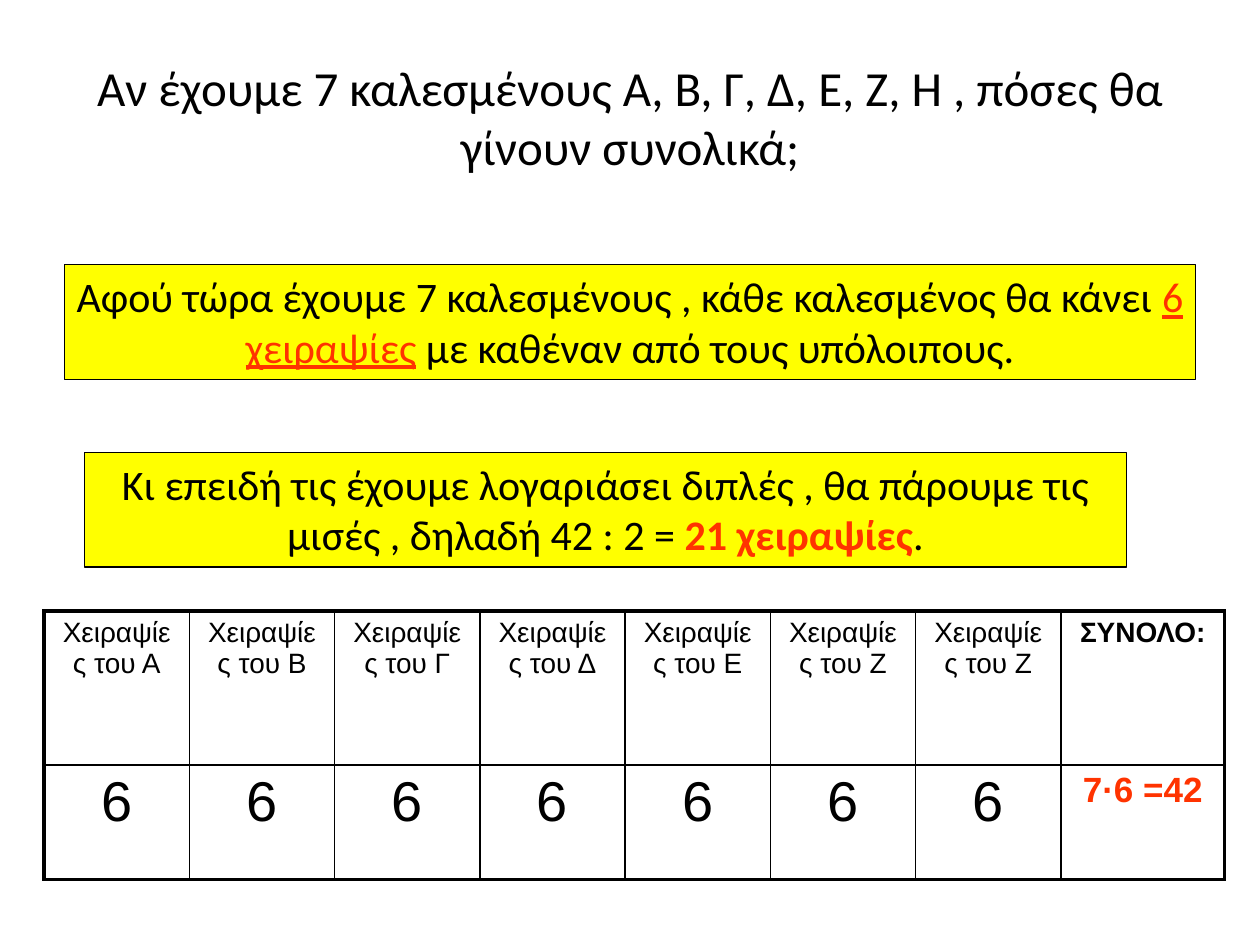
import pptx
import pptx.dml.color
import pptx.enum.shapes
import pptx.enum.text
import pptx.oxml
import pptx.oxml.ns
import pptx.util

Pt = pptx.util.Pt
CENTER = pptx.enum.text.PP_ALIGN.CENTER
MIDDLE = pptx.enum.text.MSO_ANCHOR.MIDDLE
BLACK, RED, YELLOW = "000000", "FF3300", "FFFF00"
THIN, THICK = 1, 2.25


def color(value):
    return pptx.dml.color.RGBColor.from_string(value)


def format_run(r, size, font, fill=BLACK, bold=False, underline=False):
    r.font.size = Pt(size)
    r.font.name = font
    r.font.color.rgb = color(fill)
    r.font.bold = bold
    r.font.underline = underline


def add_title(s, text):
    sp = s.shapes.title
    sp.left, sp.top, sp.width, sp.height = Pt(36), Pt(21.6), Pt(648), Pt(90)
    tf = sp.text_frame
    tf.text = text
    tf.vertical_anchor = MIDDLE
    p = tf.paragraphs[0]
    p.alignment = CENTER
    format_run(p.runs[0], 28, "Calibri")


def add_note(s, left, top, width, height, parts):
    """Yellow framed box; parts are (text, run format) pairs."""
    sp = s.shapes.add_shape(pptx.enum.shapes.MSO_SHAPE.RECTANGLE,
                            Pt(left), Pt(top), Pt(width), Pt(height))
    sp.shadow.inherit = False
    sp.fill.solid()
    sp.fill.fore_color.rgb = color(YELLOW)
    sp.line.color.rgb = color(BLACK)
    sp.line.width = Pt(0.75)
    tf = sp.text_frame
    tf.word_wrap = True
    tf.auto_size = pptx.enum.text.MSO_AUTO_SIZE.SHAPE_TO_FIT_TEXT
    tf.vertical_anchor = pptx.enum.text.MSO_ANCHOR.TOP
    p = tf.paragraphs[0]
    p.alignment = CENTER
    for text, style in parts:
        r = p.add_run()
        r.text = text
        format_run(r, 24, "Calibri", **style)


def set_borders(cell, widths):
    """Draw black cell borders; widths maps L, R, T, B to points."""
    tcPr = cell._tc.get_or_add_tcPr()
    for side, width in widths.items():
        tcPr.append(pptx.oxml.parse_xml(
            f'<a:ln{side} {pptx.oxml.ns.nsdecls("a")} w="{int(Pt(width))}">'
            f'<a:solidFill><a:srgbClr val="{BLACK}"/></a:solidFill>'
            f'</a:ln{side}>'))


def add_table(s, left, top, col_widths, row_heights, rows):
    """Grid with a thick outer frame; cells are (text, size, run format)."""
    n_rows, n_cols = len(row_heights), len(col_widths)
    table = s.shapes.add_table(n_rows, n_cols, Pt(left), Pt(top),
                               Pt(sum(col_widths)), Pt(sum(row_heights))).table
    table.first_row = table.horz_banding = False
    for column, width in zip(table.columns, col_widths):
        column.width = Pt(width)
    for row, height in zip(table.rows, row_heights):
        row.height = Pt(height)
    for i, row in enumerate(rows):
        for j, (text, size, style) in enumerate(row):
            cell = table.cell(i, j)
            cell.text_frame.text = text
            p = cell.text_frame.paragraphs[0]
            p.alignment = CENTER
            format_run(p.runs[0], size, "Arial", **style)
            set_borders(cell, {
                "L": THICK if j == 0 else THIN,
                "R": THICK if j == n_cols - 1 else THIN,
                "T": THICK if i == 0 else THIN,
                "B": THICK if i == n_rows - 1 else THIN,
            })
            cell.fill.background()


def main():
    prs = pptx.Presentation()
    prs.slide_width, prs.slide_height = Pt(720), Pt(540)
    s = prs.slides.add_slide(prs.slide_layouts[5])

    # Question
    add_title(s, "Αν έχουμε 7 καλεσμένους Α, Β, Γ, Δ, Ε, Ζ, Η , "
                 "πόσες θα γίνουν συνολικά;")

    # Handshakes per guest and in total
    guests = "ΑΒΓΔΕΖΖ"
    header = [(f"Χειραψίες του {guest}", 16, {}) for guest in guests]
    header.append(("ΣΥΝΟΛΟ:", 16, {"bold": True}))
    counts = [("6", 32, {}) for _ in guests]
    counts.append(("7·6 =42", 20, {"fill": RED, "bold": True}))
    add_table(s, 25.2, 349.2, [83] * len(guests) + [93.6], [87.84, 65.52],
              [header, counts])

    # Reasoning
    add_note(s, 36.72, 151.2, 646.56, 65.52, [
        ("Αφού τώρα έχουμε 7 καλεσμένους , κάθε καλεσμένος θα κάνει ", {}),
        ("6 χειραψίες", {"fill": RED, "underline": True}),
        (" με καθέναν από τους υπόλοιπους.", {}),
    ])
    add_note(s, 48.24, 258.48, 595.44, 65.52, [
        ("Κι επειδή τις έχουμε λογαριάσει διπλές , θα πάρουμε τις μισές , "
         "δηλαδή 42 : 2 = ", {}),
        ("21 χειραψίες", {"fill": RED, "bold": True}),
        (".", {}),
    ])

    prs.save("out.pptx")


if __name__ == "__main__":
    main()
